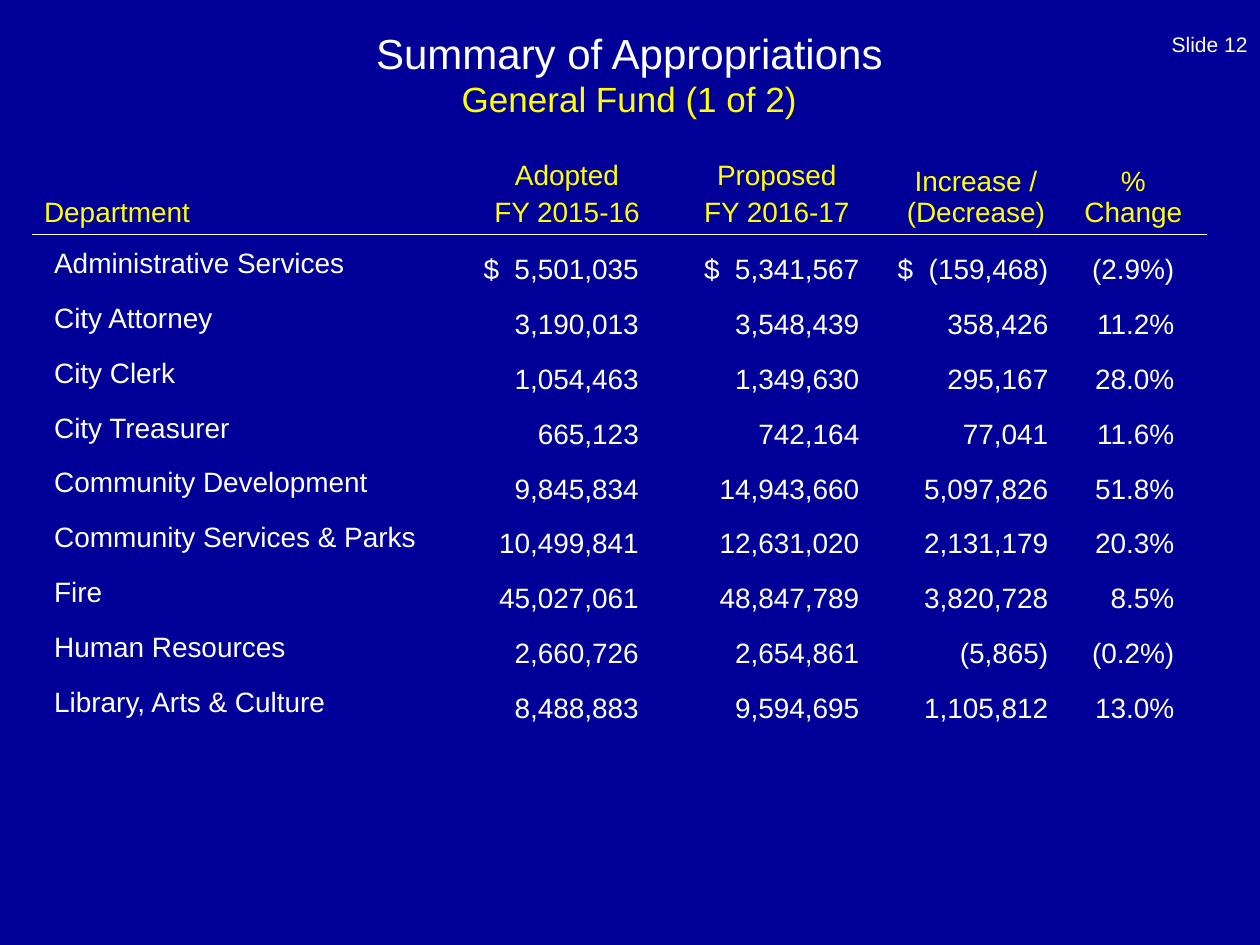
"""Build the General Fund appropriations summary slide."""
from lxml.etree import SubElement
from pptx import Presentation
from pptx.dml.color import RGBColor
from pptx.enum.text import MSO_ANCHOR as Anchor, MSO_AUTO_SIZE as AutoSize, PP_ALIGN as Align
from pptx.oxml import parse_xml
from pptx.oxml.ns import nsdecls, qn
from pptx.util import Inches, Pt

COLORS = {"background": "000099", "text": "FFFFFF", "accent": "FFFF00"}
FONT = "Arial"
NO_STYLE = "{2D5ABB26-0587-4C30-8999-92F81FD0307C}"
HEADERS = ["Department", "Adopted\nFY 2015-16", "Proposed\nFY 2016-17",
           "Increase / (Decrease)", "% Change"]
DEPARTMENTS = [
    ("Administrative Services", "$  5,501,035", "$  5,341,567", "$  (159,468)", "(2.9%)"),
    ("City Attorney", "3,190,013", "3,548,439", "358,426", "11.2%"),
    ("City Clerk", "1,054,463", "1,349,630", "295,167", "28.0%"),
    ("City Treasurer", "665,123", "742,164", "77,041", "11.6%"),
    ("Community Development", "9,845,834", "14,943,660", "5,097,826", "51.8%"),
    ("Community Services & Parks", "10,499,841", "12,631,020", "2,131,179", "20.3%"),
    ("Fire", "45,027,061", "48,847,789", "3,820,728", "8.5%"),
    ("Human Resources", "2,660,726", "2,654,861", "(5,865)", "(0.2%)"),
    ("Library, Arts & Culture", "8,488,883", "9,594,695", "1,105,812", "13.0%"),
]


def format_run(r, size, color):
    r.font.name = FONT
    r.font.size = Pt(size)
    r.font.color.rgb = RGBColor.from_string(COLORS[color])


def format_text(tf, size, color, align):
    for i, p in enumerate(tf.paragraphs):
        p.alignment = align
        if i:
            p.space_before = Pt(0.2 * size)
        for r in p.runs:
            format_run(r, size, color)


def add_title(s):
    title = s.shapes.title
    title.left, title.top = Inches(0.33), Inches(0.25)
    title.width, title.height = Inches(9.33), Inches(0.67)
    tf = title.text_frame
    tf.text = "Summary of Appropriations\vGeneral Fund (1 of 2)"
    tf.auto_size = AutoSize.NONE
    tf.vertical_anchor = Anchor.MIDDLE
    p = tf.paragraphs[0]
    p.alignment = Align.CENTER
    for r, size, color in zip(p.runs, (24, 20), ("text", "accent")):
        format_run(r, size, color)
    SubElement(p._p.find(qn("a:br")), qn("a:rPr")).set("sz", "2400")


def add_slide_label(s):
    tf = s.shapes.add_textbox(Inches(7.67), 0, Inches(2.33), Inches(0.5)).text_frame
    tf.word_wrap = True
    tf.vertical_anchor = Anchor.BOTTOM
    tf.text = "Slide 12"
    format_text(tf, 12, "text", Align.RIGHT)


def add_plain_table(s, left, top, widths, heights):
    shape = s.shapes.add_table(len(heights), len(widths), Inches(left), Inches(top),
                               Inches(sum(widths)), Inches(sum(heights)))
    table = shape.table
    table.first_row = table.horz_banding = False
    table._tbl.tblPr.find(qn("a:tableStyleId")).text = NO_STYLE
    for column, width in zip(table.columns, widths):
        column.width = Inches(width)
    for row, height in zip(table.rows, heights):
        row.height = Inches(height)
    for cell in table.iter_cells():
        cell.fill.background()
    return table


def set_border(cell, side):
    cell._tc.get_or_add_tcPr().insert(0, parse_xml(
        f'<a:{side} {nsdecls("a")} w="12700"><a:solidFill>'
        f'<a:srgbClr val="{COLORS["text"]}"/></a:solidFill></a:{side}>'))


def add_header_table(s):
    table = add_plain_table(s, 0.25, 1.17, [3.5, 1.5, 1.83, 1.33, 1.17], [0.69, 0.37])
    for col, text in enumerate(HEADERS):
        cell, below = table.cell(0, col), table.cell(1, col)
        cell.text = text
        cell.vertical_anchor = Anchor.BOTTOM
        format_text(cell.text_frame, 16, "accent", Align.CENTER if col else Align.LEFT)
        below.margin_top = below.margin_bottom = 0
        set_border(cell, "lnB")
        set_border(below, "lnT")


def add_department_table(s):
    heights = [3.92 / len(DEPARTMENTS)] * len(DEPARTMENTS)
    table = add_plain_table(s, 0.33, 1.92, [3.17, 1.58, 1.75, 1.5, 1], heights)
    for row, values in enumerate(DEPARTMENTS):
        for col, text in enumerate(values):
            cell = table.cell(row, col)
            cell.text = text
            if col:
                cell.vertical_anchor = Anchor.MIDDLE
                cell.margin_left = cell.margin_right = cell.margin_top = Inches(0.01)
                cell.margin_bottom = 0
            format_text(cell.text_frame, 16, "text", Align.RIGHT if col else Align.LEFT)


def main():
    prs = Presentation()
    prs.slide_width, prs.slide_height = Inches(10), Inches(7.5)
    s = prs.slides.add_slide(prs.slide_layouts[5])
    fill = s.background.fill
    fill.solid()
    fill.fore_color.rgb = RGBColor.from_string(COLORS["background"])
    add_slide_label(s)
    add_title(s)
    add_header_table(s)
    add_department_table(s)
    prs.save("out.pptx")


if __name__ == "__main__":
    main()
